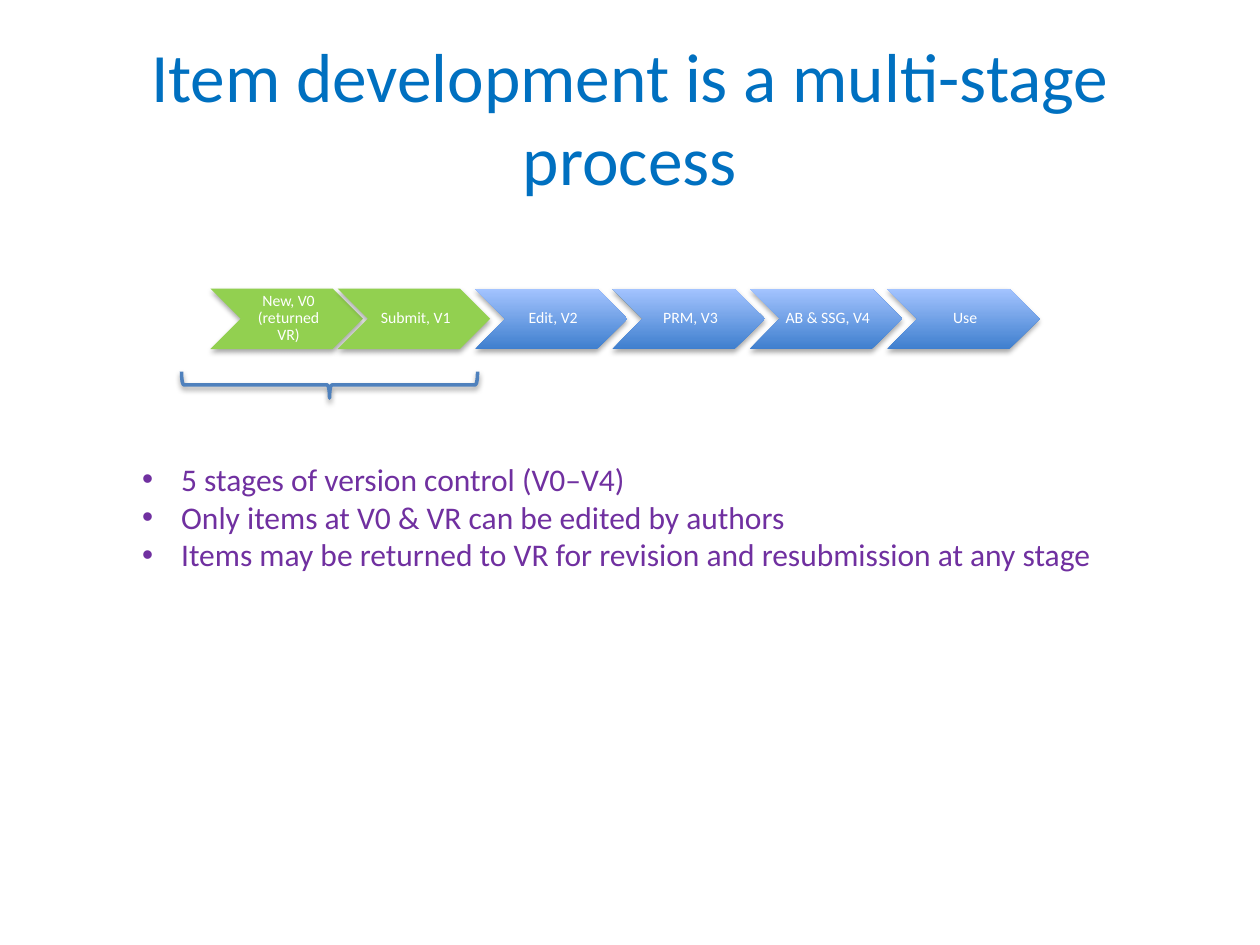
"""Build a slide showing the stages of item development."""
import pptx
import pptx.dml.color
import pptx.enum.shapes
import pptx.enum.text
import pptx.oxml
import pptx.oxml.ns
import pptx.util

Inches = pptx.util.Inches
Pt = pptx.util.Pt
Rgb = pptx.dml.color.RGBColor.from_string
Kind = pptx.enum.shapes.MSO_SHAPE
Anchor = pptx.enum.text.MSO_ANCHOR
Align = pptx.enum.text.PP_ALIGN
Fit = pptx.enum.text.MSO_AUTO_SIZE

theme = {
    "font": "Calibri",
    "title": ("0070C0", 39.6),
    "stage": ("FFFFFF", 9),
    "point": ("7030A0", 18),
    "done": "92D050",
    "next": ("3F7FCE", "A4C4FF"),
    "brace": "4F81BD",
}


def write(para, text, role):
    color, size = theme[role]
    run = para.add_run()
    run.text = text
    look = {"name": theme["font"], "size": Pt(size)}
    for key, value in look.items():
        setattr(run.font, key, value)
    run.font.color.rgb = Rgb(color)


def shade(shape, alpha, dist):
    shape.shadow.inherit = False
    effects = shape._element.spPr.find(pptx.oxml.ns.qn("a:effectLst"))
    effects.append(pptx.oxml.parse_xml(
        f'<a:outerShdw {pptx.oxml.ns.nsdecls("a")} blurRad="{Pt(3.1)}" '
        f'dist="{Pt(dist)}" dir="5400000" rotWithShape="0">'
        f'<a:srgbClr val="000000"><a:alpha val="{alpha * 1000}"/></a:srgbClr>'
        '</a:outerShdw>'))


deck = pptx.Presentation()
deck.slide_width, deck.slide_height = Inches(10), Inches(7.5)
shapes = deck.slides.add_slide(deck.slide_layouts[6]).shapes

title = shapes.add_textbox(Inches(0.5), Inches(0.3), Inches(9), Inches(1.25))
frame = title.text_frame
for key, value in {"word_wrap": True, "vertical_anchor": Anchor.MIDDLE}.items():
    setattr(frame, key, value)
frame.paragraphs[0].alignment = Align.CENTER
write(frame.paragraphs[0], "Item development is a multi-stage process", "title")

stages = ["New, V0 (returned VR)", "Submit, V1", "Edit, V2", "PRM, V3",
          "AB & SSG, V4", "Use"]
cell = {
    "word_wrap": True,
    "vertical_anchor": Anchor.MIDDLE,
    "margin_left": Inches(0.04),
    "margin_top": Inches(0.01),
    "margin_right": Inches(0.01),
    "margin_bottom": Inches(0.01),
}
for index, label in enumerate(stages):
    left = 1.67 if index == 0 else 2.68 + 1.09 * (index - 1)
    stage = shapes.add_shape(Kind.CHEVRON, Inches(left), Inches(2.29),
                             Inches(1.21), Inches(0.48))
    if index < 2:
        stage.fill.solid()
        stage.fill.fore_color.rgb = Rgb(theme["done"])
    else:
        stage.fill.gradient()
        stage.fill.gradient_angle = 90
        for stop, color in zip(stage.fill.gradient_stops, theme["next"]):
            stop.color.rgb = Rgb(color)
    stage.line.fill.background()
    shade(stage, 35, 1.8)
    for key, value in cell.items():
        setattr(stage.text_frame, key, value)
    para = stage.text_frame.paragraphs[0]
    for key, value in {"alignment": Align.CENTER, "line_spacing": 0.9}.items():
        setattr(para, key, value)
    write(para, label, "stage")

points = ["5 stages of version control (V0–V4)",
          "Only items at V0 & VR can be edited by authors",
          "Items may be returned to VR for revision and resubmission at any stage"]
notes = shapes.add_textbox(Inches(1.03), Inches(3.6), Inches(7.87), Inches(1.01))
frame = notes.text_frame
for key, value in {"word_wrap": False, "auto_size": Fit.SHAPE_TO_FIT_TEXT}.items():
    setattr(frame, key, value)
for index, point in enumerate(points):
    para = frame.add_paragraph() if index else frame.paragraphs[0]
    props = para._p.get_or_add_pPr()
    props.set("marL", str(Inches(0.31)))
    props.set("indent", str(-Inches(0.31)))
    for tag in ('buFont typeface="Arial"', 'buChar char="•"'):
        props.append(pptx.oxml.parse_xml(
            f'<a:{tag} {pptx.oxml.ns.nsdecls("a")}/>'))
    write(para, point, "point")

brace = shapes.add_shape(Kind.RIGHT_BRACE, Inches(2.51), Inches(1.88),
                         Inches(0.21), Inches(2.35))
brace.rotation = 90
brace.fill.background()
brace.line.color.rgb = Rgb(theme["brace"])
brace.line.width = Pt(2)
shade(brace, 38, 1.6)

deck.save("out.pptx")
